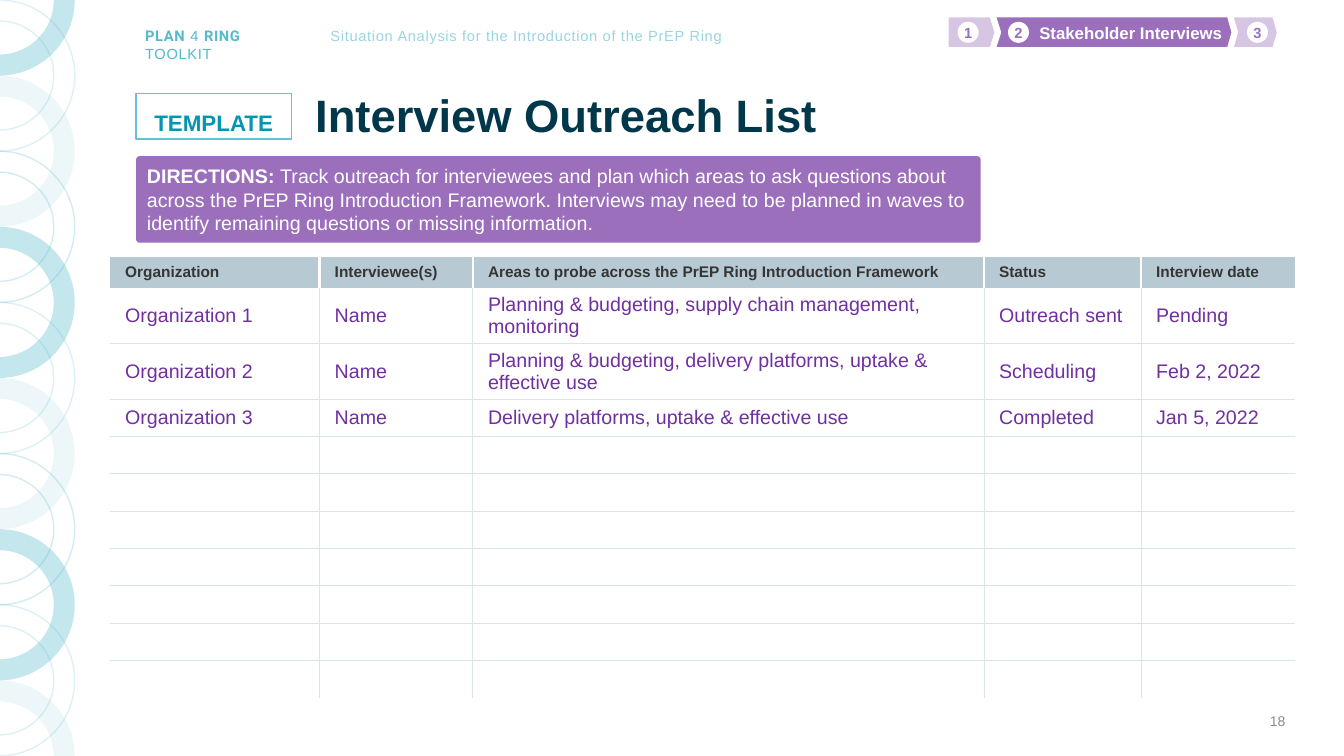
import math

import lxml.etree
import pptx
import pptx.dml.color
import pptx.enum.shapes
import pptx.enum.text
import pptx.oxml.ns
import pptx.util

COLORS = {
    "teal": "56B9CC", "pale_teal": "9AD5E0", "frame": "67C0D4", "tag": "0495B0",
    "navy": "00374B", "purple": "9C6FBD", "entry": "7030A0", "header": "B7CAD3",
    "ink": "353535", "rule": "DBE5E9", "grey": "8C8C8C", "white": "FFFFFF",
}
SHAPE = pptx.enum.shapes.MSO_SHAPE
ALIGN = pptx.enum.text.PP_ALIGN
ANCHOR = pptx.enum.text.MSO_ANCHOR
COLS, ROWS = 160, 90  # square grid cells of 1/12 inch
PLAIN_TABLE = "{2D5ABB26-0587-4C30-8999-92F81FD0307C}"
qn = pptx.oxml.ns.qn


def grid(n):
    return pptx.util.Inches(n / 12)


def rgb(name):
    return pptx.dml.color.RGBColor.from_string(COLORS[name])


def sub(parent, tag, **attrs):
    return lxml.etree.SubElement(parent, qn(tag), {k: str(v) for k, v in attrs.items()})


def set_alpha(fill, percent):
    sub(fill.find(qn("a:solidFill")).find(qn("a:srgbClr")), "a:alpha", val=percent * 1000)


def paint(sp, fill=None, line=None, width=1):
    sp.shadow.inherit = False
    if fill:
        sp.fill.solid()
        sp.fill.fore_color.rgb = rgb(fill)
    else:
        sp.fill.background()
    if line:
        sp.line.color.rgb = rgb(line)
        sp.line.width = pptx.util.Pt(width)
    else:
        sp.line.fill.background()


def style(p, size, color, bold=False, align=ALIGN.LEFT):
    p.alignment = align
    p.font.name = "Arial"
    p.font.size = pptx.util.Pt(size)
    p.font.bold = bold
    p.font.color.rgb = rgb(color)


def add_shape(s, kind, box, fill, line=None, width=1, adj=None):
    sp = s.shapes.add_shape(kind, *map(grid, box))
    if adj is not None:
        sp.adjustments[0] = adj
    paint(sp, fill, line, width)
    return sp


def add_text(s, box, text, anchor=ANCHOR.TOP, **font):
    tf = s.shapes.add_textbox(*map(grid, box)).text_frame
    tf.word_wrap = True
    tf.vertical_anchor = anchor
    p = tf.paragraphs[0]
    p.text = text
    style(p, **font)
    return tf


def space_letters(p):
    for r in p.runs:
        r._r.get_or_add_rPr().set("spc", "50")


# Ring sector right of x, between two angles in degrees
def add_ring(s, x, y, outer, inner, start, end):
    top = y + outer * math.sin(math.radians(start))
    bottom = y + outer * math.sin(math.radians(end))
    fb = s.shapes.build_freeform(grid(x), grid(top))
    fb.add_line_segments([(grid(x + outer), grid(top)), (grid(x + outer), grid(bottom)),
                          (grid(x), grid(bottom))], close=True)
    sp = fb.convert_to_shape()
    outline = next(sp._element.iter(qn("a:path")))
    for step in list(outline):
        outline.remove(step)
    sweep = end - start
    for tag, radius, angle, turn in [("a:moveTo", outer, start, sweep),
                                     ("a:lnTo", inner, end, -sweep)]:
        a = math.radians(angle)
        sub(sub(outline, tag), "a:pt", x=grid(radius * math.cos(a)),
            y=grid(y - top + radius * math.sin(a)))
        sub(outline, "a:arcTo", wR=grid(radius), hR=grid(radius),
            stAng=angle % 360 * 60000, swAng=turn * 60000)
    sub(outline, "a:close")
    return sp


# Chain of half rings down the left edge
def ring_chain(s, x, step, outer, inner):
    looks = [("fill", 35), ("line", 20), ("fill", 10), ("line", 25)]
    last = ROWS // step
    for k in range(last + 1):
        sp = add_ring(s, x, k * step, outer, inner,
                      0 if k == 0 else -90, 0 if k == last else 90)
        part, alpha = looks[k % len(looks)]
        paint(sp, **{part: "teal"})
        spPr = sp._element.spPr
        set_alpha(spPr if part == "fill" else spPr.find(qn("a:ln")), alpha)


# Toolkit name and running title
def running_head(s, x, y, w, h):
    tf = add_text(s, (x, y, 22.1, h), "", size=10.5, color="teal")
    tf.margin_right = grid(3)
    p = tf.paragraphs[0]
    for text, bold in [("PLAN", True), (" 4 ", False), ("RING ", True), ("TOOLKIT", False)]:
        r = p.add_run()
        r.text = text
        r.font.bold = bold
        r.font.name = "Roboto" if bold else "Arial"
    space_letters(p)
    tf = add_text(s, (x + w - 50, y, 50, h),
                  "Situation Analysis for the Introduction of the PrEP Ring",
                  size=10.5, color="pale_teal", align=ALIGN.CENTER)
    space_letters(tf.paragraphs[0])


# Numbered steps, the current one labelled; each overlaps the one to its right
def step_tracker(s, x, y, h):
    steps = [("3", "", 33.6, 6.25, 2.3, 0.14),
             ("2", "Stakeholder Interviews", 5.65, 28.8, 1.8, 0.14),
             ("1", "", 0, 6.25, 1.45, 0.16)]
    dot = 2.5
    for number, label, left, w, inset, adj in steps:
        sp = add_shape(s, SHAPE.PENTAGON, (x + left, y, w, h), "purple", "white", 4.5, adj)
        if label:
            p = sp.text_frame.paragraphs[0]
            p.text = label
            style(p, 12, "white", True, ALIGN.RIGHT)
        else:
            set_alpha(sp._element.spPr, 40)
        sp = add_shape(s, SHAPE.OVAL, (x + left + inset, y + (h - dot) / 2, dot, dot), "white")
        tf = sp.text_frame
        tf.word_wrap = False
        tf.margin_left = tf.margin_right = tf.margin_top = tf.margin_bottom = 0
        tf.paragraphs[0].text = number
        style(tf.paragraphs[0], 10.5, "purple", True, ALIGN.CENTER)


# Template tag, title and directions
def heading(s, x, y, w, h):
    sp = add_shape(s, SHAPE.RECTANGLE, (x, y + 0.45, 18.5, 5.4), "white", "frame")
    tf = sp.text_frame
    tf.word_wrap = False
    tf.margin_top, tf.margin_bottom = grid(1), 0
    p = tf.paragraphs[0]
    p.text = "TEMPLATE"
    p.line_spacing = 1.15
    style(p, 16, "tag", True, ALIGN.CENTER)
    tf = add_text(s, (x + 20.15, y, 113, 6.7), "Interview Outreach List",
                  ANCHOR.MIDDLE, size=32.4, color="navy", bold=True)
    tf.paragraphs[0].line_spacing = 0.9
    sp = add_shape(s, SHAPE.ROUNDED_RECTANGLE, (x, y + h - 10.3, w, 10.3), "purple", adj=0.04)
    p = sp.text_frame.paragraphs[0]
    style(p, 14, "white")
    r = p.add_run()
    r.text = "DIRECTIONS: "
    r.font.bold = True
    p.add_run().text = (
        "Track outreach for interviewees and plan which areas to ask questions about across "
        "the PrEP Ring Introduction Framework. Interviews may need to be planned in waves to "
        "identify remaining questions or missing information.")


def set_border(cell, side, color, width):
    ln = sub(cell._tc.get_or_add_tcPr(), "a:ln" + side, w=pptx.util.Pt(width))
    sub(sub(ln, "a:solidFill"), "a:srgbClr", val=COLORS[color])


# Outreach table with blank rows to fill in
def outreach_table(s, x, y):
    widths = [24.95, 18.25, 60.85, 18.7, 18.35]
    heights = [3.7, 6.4, 6.4] + [4.45] * 8
    rows = [
        ["Organization", "Interviewee(s)",
         "Areas to probe across the PrEP Ring Introduction Framework", "Status", "Interview date"],
        ["Organization 1", "Name", "Planning & budgeting, supply chain management, monitoring",
         "Outreach sent", "Pending"],
        ["Organization 2", "Name", "Planning & budgeting, delivery platforms, uptake & effective use",
         "Scheduling", "Feb 2, 2022"],
        ["Organization 3", "Name", "Delivery platforms, uptake & effective use",
         "Completed", "Jan 5, 2022"],
    ]
    rows += [[""] * len(widths)] * (len(heights) - len(rows))
    box = (x, y, sum(widths), sum(heights))
    table = s.shapes.add_table(len(heights), len(widths), *map(grid, box)).table
    table.first_row = table.horz_banding = False
    next(table._tbl.iter(qn("a:tableStyleId"))).text = PLAIN_TABLE
    for column, w in zip(table.columns, widths):
        column.width = grid(w)
    for i, (row, h, texts) in enumerate(zip(table.rows, heights, rows)):
        row.height = grid(h)
        head = i == 0
        for j, (cell, text) in enumerate(zip(row.cells, texts)):
            cell.margin_left = cell.margin_right = grid(1.8)
            cell.margin_top = cell.margin_bottom = grid(0.5)
            cell.vertical_anchor = ANCHOR.MIDDLE
            p = cell.text_frame.paragraphs[0]
            p.text = text
            style(p, 11 if head else 14, "ink" if head else "entry", head)
            if j < len(widths) - 1:
                set_border(cell, "R", *(("white", 2.25) if head else ("rule", 0.75)))
            if 0 < i < len(heights) - 1:
                set_border(cell, "B", "rule", 0.75)
            cell.fill.solid()
            cell.fill.fore_color.rgb = rgb("header" if head else "white")


def main():
    prs = pptx.Presentation()
    prs.slide_width, prs.slide_height = grid(COLS), grid(ROWS)
    s = prs.slides.add_slide(prs.slide_layouts[6])
    ring_chain(s, x=-0.1, step=9, outer=9, inner=6.5)
    running_head(s, 16.1, 2.65, 71.6, 3.35)
    step_tracker(s, 112.55, 1.7, 4.3)
    heading(s, 16.2, 10.7, 100.55, 18.2)
    add_text(s, (118.2, 83.4, 36, 4.8), "18", ANCHOR.MIDDLE,
             size=10, color="grey", align=ALIGN.RIGHT)
    outreach_table(s, 13.1, 30.6)
    prs.save("out.pptx")


if __name__ == "__main__":
    main()
